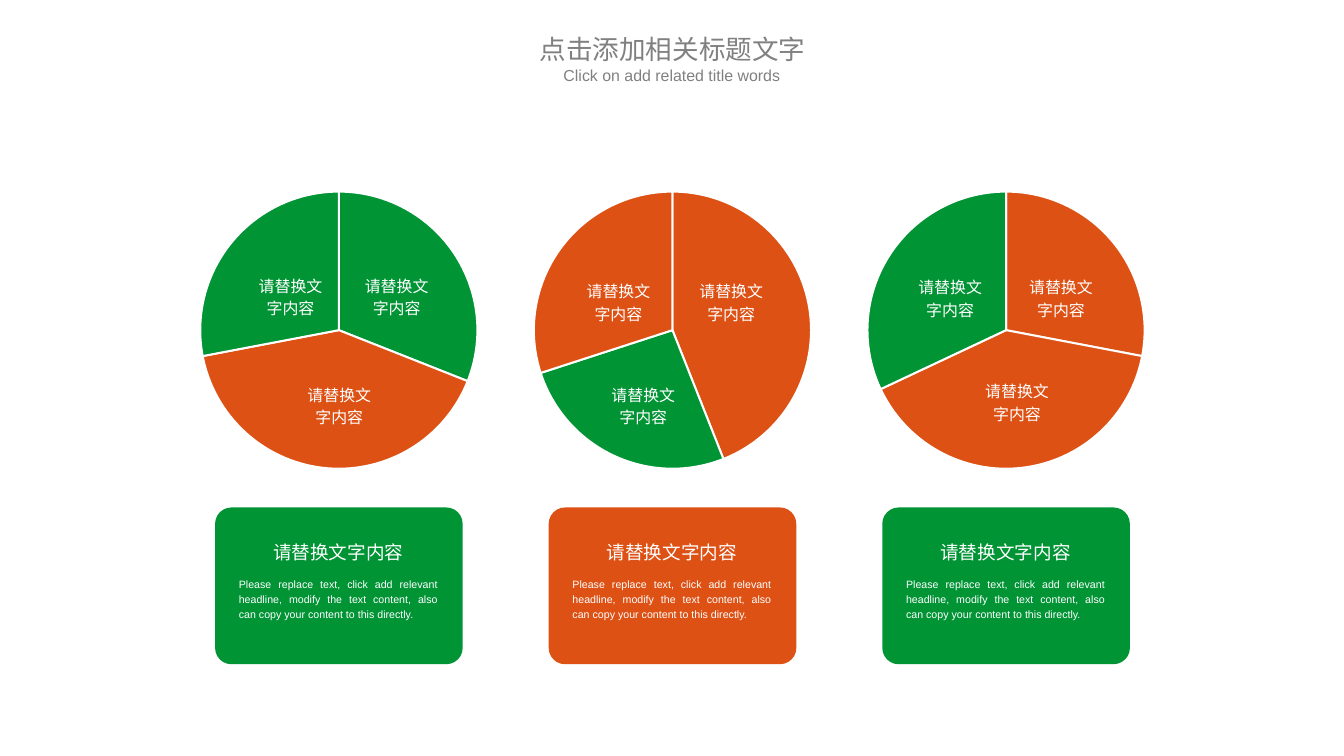
"""Build a slide with three pie charts, each above a caption card."""
from dataclasses import dataclass

from lxml.etree import SubElement
from pptx import Presentation
from pptx.chart.chart import Chart
from pptx.chart.data import CategoryChartData
from pptx.dml.color import RGBColor
from pptx.enum.chart import XL_CHART_TYPE
from pptx.enum.shapes import MSO_SHAPE
from pptx.enum.text import MSO_AUTO_SIZE, PP_ALIGN
from pptx.oxml import parse_xml
from pptx.oxml.ns import nsdecls, qn
from pptx.slide import Slide
from pptx.util import Inches, Pt

GREEN = RGBColor(0x00, 0x94, 0x35)
ORANGE = RGBColor(0xDD, 0x51, 0x15)
WHITE = RGBColor(0xFF, 0xFF, 0xFF)
GRAY = RGBColor(0x80, 0x80, 0x80)
BLACK = RGBColor(0x00, 0x00, 0x00)

LATIN_FONT = "Arial"
CHINESE_FONT = "Noto Sans CJK SC"

COLUMN_LEFT, COLUMN_PITCH = 1.7, 3.49
PIE_TOP, PIE_WIDTH, PIE_HEIGHT, PIE_DIAMETER = 1.86, 3.69, 3.19, 2.9
LABEL_WIDTH, LABEL_HEIGHT = 0.96, 0.59
CARD_TOP, CARD_WIDTH, CARD_HEIGHT = 5.31, 2.59, 1.64

PLACEHOLDER = "请替换文字内容"
BODY = (
    "Please replace text, click add relevant headline, modify the text "
    "content, also can copy your content to this directly."
)


@dataclass(frozen=True)
class Slice:
    """One pie slice and the top-left corner of its label."""

    value: int
    color: RGBColor
    label_left: float
    label_top: float


@dataclass(frozen=True)
class Column:
    """A pie and the colour of the card below it."""

    slices: tuple[Slice, ...]
    card_color: RGBColor


@dataclass(frozen=True)
class TextStyle:
    """The look of a text box."""

    size: float
    color: RGBColor = WHITE
    font: str = LATIN_FONT
    align: PP_ALIGN = PP_ALIGN.CENTER
    line_spacing: float = 1.2
    wrap: bool = True


COLUMNS = (
    Column((Slice(31, GREEN, 3.67, 2.8), Slice(41, ORANGE, 3.07, 3.94),
            Slice(28, GREEN, 2.56, 2.8)), GREEN),
    Column((Slice(44, ORANGE, 7.17, 2.86), Slice(26, GREEN, 6.25, 3.94),
            Slice(30, ORANGE, 5.99, 2.86)), ORANGE),
    Column((Slice(28, ORANGE, 10.62, 2.82), Slice(40, ORANGE, 10.16, 3.9),
            Slice(32, GREEN, 9.46, 2.82)), GREEN),
)

LABEL_STYLE = TextStyle(12)
HEADING_STYLE = TextStyle(14, wrap=False)
BODY_STYLE = TextStyle(8, align=PP_ALIGN.JUSTIFY)
TITLE_STYLE = TextStyle(20, GRAY, CHINESE_FONT, line_spacing=1.0)
SUBTITLE_STYLE = TextStyle(12, GRAY, line_spacing=1.0)


def add_text(page: Slide, text: str, left: float, top: float, width: float,
             height: float, style: TextStyle) -> None:
    """Add a one-paragraph text box."""
    box = page.shapes.add_textbox(
        Inches(left), Inches(top), Inches(width), Inches(height))
    frame = box.text_frame
    frame.text = text
    frame.word_wrap = style.wrap
    frame.auto_size = MSO_AUTO_SIZE.NONE
    para = frame.paragraphs[0]
    para.alignment = style.align
    para.line_spacing = style.line_spacing
    span = para.runs[0]
    span.font.size = Pt(style.size)
    span.font.name = style.font
    span.font.color.rgb = style.color
    SubElement(span.font._element, qn("a:ea"), typeface=style.font)


def set_pie_diameter(chart: Chart) -> None:
    """Centre the pie in its frame at a fixed diameter."""
    width, height = PIE_DIAMETER / PIE_WIDTH, PIE_DIAMETER / PIE_HEIGHT
    plot_area = chart._chartSpace.chart.plotArea
    for layout in plot_area.findall(qn("c:layout")):
        plot_area.remove(layout)
    plot_area.insert(0, parse_xml(
        f'<c:layout {nsdecls("c")}><c:manualLayout>'
        '<c:layoutTarget val="inner"/>'
        '<c:xMode val="edge"/><c:yMode val="edge"/>'
        f'<c:x val="{(1 - width) / 2:.4f}"/><c:y val="{(1 - height) / 2:.4f}"/>'
        f'<c:w val="{width:.4f}"/><c:h val="{height:.4f}"/>'
        '</c:manualLayout></c:layout>'))


def add_pie(page: Slide, slices: tuple[Slice, ...], left: float) -> None:
    """Add a pie chart and its slice labels."""
    data = CategoryChartData()
    data.categories = ["1", "2", "3", "4"]
    data.add_series("Series 1", [part.value for part in slices] + [None])
    chart = page.shapes.add_chart(
        XL_CHART_TYPE.PIE, Inches(left), Inches(PIE_TOP),
        Inches(PIE_WIDTH), Inches(PIE_HEIGHT), data).chart
    chart.has_title = False
    chart.has_legend = False
    chart.font.name = LATIN_FONT
    chart.font.size = Pt(10)
    chart.font.color.rgb = BLACK
    set_pie_diameter(chart)
    plot = chart.plots[0]
    plot.vary_by_categories = True
    for index, part in enumerate(slices):
        wedge = plot.series[0].points[index].format
        wedge.fill.solid()
        wedge.fill.fore_color.rgb = part.color
        wedge.line.color.rgb = WHITE
        wedge.line.width = Pt(1.5)
        add_text(page, PLACEHOLDER, part.label_left, part.label_top,
                 LABEL_WIDTH, LABEL_HEIGHT, LABEL_STYLE)


def add_card(page: Slide, color: RGBColor, left: float) -> None:
    """Add a rounded card with a heading and body text."""
    card = page.shapes.add_shape(
        MSO_SHAPE.ROUNDED_RECTANGLE, Inches(left), Inches(CARD_TOP),
        Inches(CARD_WIDTH), Inches(CARD_HEIGHT))
    card.adjustments[0] = 0.104
    card.shadow.inherit = False
    card.fill.solid()
    card.fill.fore_color.rgb = color
    card.line.fill.background()
    add_text(page, BODY, left + 0.15, CARD_TOP + 0.66, 2.28, 0.57, BODY_STYLE)
    add_text(page, PLACEHOLDER, left + 0.5, CARD_TOP + 0.25, 1.58, 0.36,
             HEADING_STYLE)


def main() -> None:
    """Create and save the deck."""
    deck = Presentation()
    deck.slide_width = Inches(14.06)
    deck.slide_height = Inches(7.91)
    page = deck.slides.add_slide(deck.slide_layouts[6])
    for index, column in enumerate(COLUMNS):
        left = COLUMN_LEFT + index * COLUMN_PITCH
        add_pie(page, column.slices, left)
        add_card(page, column.card_color, left + 0.55)
    add_text(page, "点击添加相关标题文字", 5.36, 0.29, 3.35, 0.41, TITLE_STYLE)
    add_text(page, "Click on add related title words", 5.76, 0.64, 2.54, 0.41,
             SUBTITLE_STYLE)
    deck.save("out.pptx")


if __name__ == "__main__":
    main()
